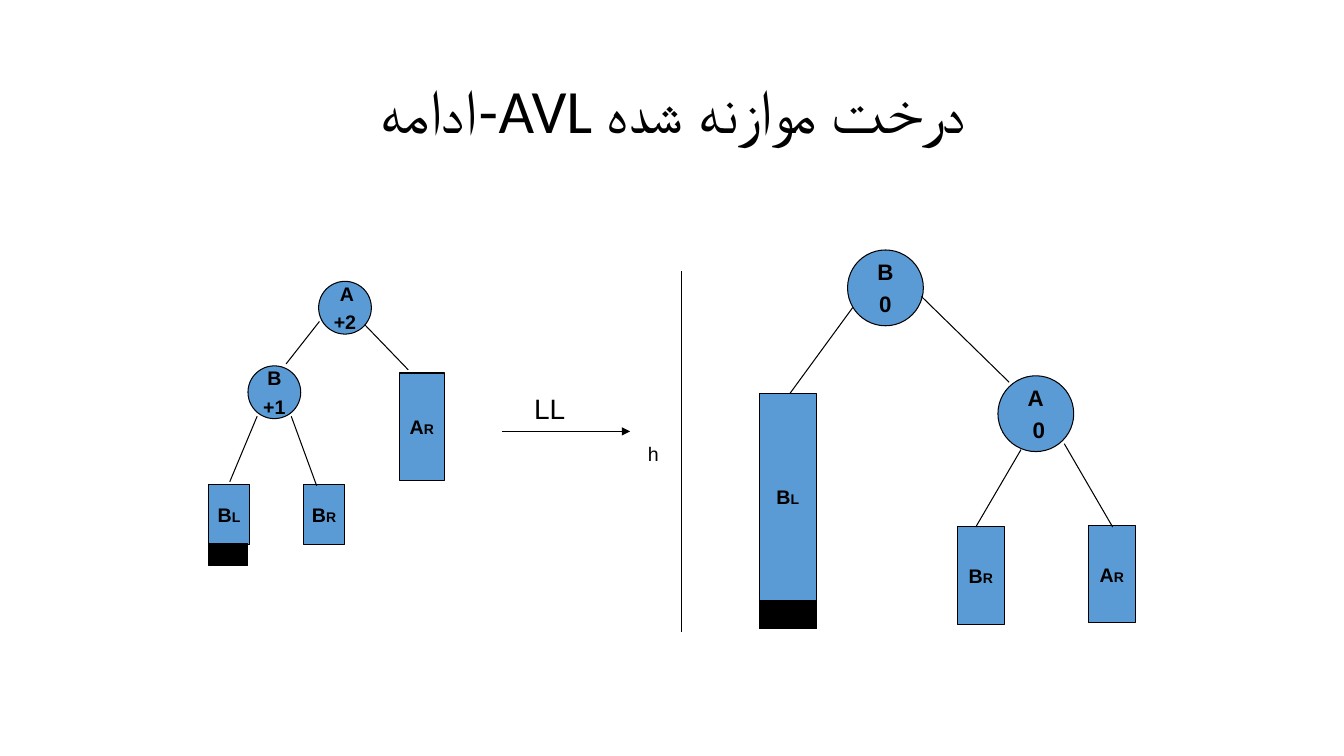
from lxml import etree
from pptx import Presentation
from pptx import util as u
from pptx.dml.color import RGBColor
from pptx.enum import shapes, text
from pptx.oxml import ns


def color(value):
    return RGBColor.from_string(value)


def write(shape, paragraphs, alignment, bold):
    frame = shape.text_frame
    frame.word_wrap = False
    frame.vertical_anchor = text.MSO_ANCHOR.MIDDLE
    for index, pieces in enumerate(paragraphs):
        paragraph = frame.add_paragraph() if index else frame.paragraphs[0]
        paragraph.alignment = alignment
        paragraph.space_before = u.Pt(3.5)
        for words, size in pieces:
            run = paragraph.add_run()
            run.text = words
            run.font.name = "Arial"
            run.font.size = u.Pt(size)
            run.font.bold = bold
            run.font.color.rgb = color("000000")


presentation = Presentation()
presentation.slide_width = u.Cm(33.87)
presentation.slide_height = u.Cm(19.05)
slide = presentation.slides.add_slide(presentation.slide_layouts[5])

title = slide.shapes.title
title.left, title.top, title.width, title.height = (
    u.Cm(length) for length in (2.34, 1.02, 29.21, 3.68)
)
title.text_frame.text = "درخت موازنه شده AVL-ادامه"
title.text_frame.vertical_anchor = text.MSO_ANCHOR.MIDDLE
title.text_frame.auto_size = text.MSO_AUTO_SIZE.NONE
paragraph = title.text_frame.paragraphs[0]
paragraph.alignment = text.PP_ALIGN.CENTER
paragraph.line_spacing = 0.9
paragraph._p.get_or_add_pPr().set("rtl", "1")
font = paragraph.runs[0].font
font.name = "Calibri"
font.size = u.Pt(44)
font.color.rgb = color("000000")

oval = shapes.MSO_SHAPE.OVAL
rectangle = shapes.MSO_SHAPE.RECTANGLE
tree_parts = [
    (oval, 21.36, 6.3, 1.91, 1.91, "5B9BD5", [[("B", 16)], [("0", 16)]]),
    (oval, 25.15, 9.47, 1.91, 1.91, "5B9BD5", [[("A", 16)], [(" 0", 16)]]),
    (rectangle, 24.13, 13.28, 1.18, 2.46, "5B9BD5", [[("B", 14), ("R", 10)]]),
    (rectangle, 27.43, 13.24, 1.18, 2.46, "5B9BD5", [[("A", 14), ("R", 10)]]),
    (rectangle, 19.13, 9.91, 1.45, 5.23, "5B9BD5", [[("B", 14), ("L", 10)]]),
    (rectangle, 19.13, 15.14, 1.45, 0.71, "000000", []),
    (oval, 8.03, 7.09, 1.33, 1.33, "5B9BD5", [[(" ", 10), ("A", 14)], [("+2", 14)]]),
    (oval, 6.25, 9.22, 1.33, 1.33, "5B9BD5", [[("B", 14)], [("+1", 14)]]),
    (rectangle, 5.26, 12.2, 1.03, 1.52, "5B9BD5", [[("B", 14), ("L", 10)]]),
    (rectangle, 7.65, 12.2, 1.03, 1.52, "5B9BD5", [[("B", 14), ("R", 10)]]),
    (rectangle, 10.06, 9.4, 1.14, 2.7, "5B9BD5", [[("A", 14), ("R", 10)]]),
    (rectangle, 5.26, 13.69, 0.99, 0.56, "000000", []),
]
for kind, left, top, width, height, fill, paragraphs in tree_parts:
    shape = slide.shapes.add_shape(kind, u.Cm(left), u.Cm(top), u.Cm(width), u.Cm(height))
    shape.shadow.inherit = False
    shape.fill.solid()
    shape.fill.fore_color.rgb = color(fill)
    shape.line.color.rgb = color("000000")
    shape.line.width = u.Pt(0.75)
    write(shape, paragraphs, text.PP_ALIGN.CENTER, True)

labels = [("LL", 20, 13.21, 9.75, 1.3, 1.09), ("h", 14, 16.08, 11.02, 0.79, 0.84)]
for words, size, left, top, width, height in labels:
    label = slide.shapes.add_textbox(u.Cm(left), u.Cm(top), u.Cm(width), u.Cm(height))
    write(label, [[(words, size)]], text.PP_ALIGN.LEFT, False)

rotation_arrow = (12.65, 10.87, 15.88, 10.87)
height_line = (17.17, 6.83, 17.17, 15.93)
branches = [
    (21.49, 7.75, 19.91, 9.91),
    (23.22, 7.47, 25.43, 9.63),
    (25.73, 11.33, 24.59, 13.28),
    (26.82, 11.18, 28.04, 13.28),
    (8.05, 8.1, 7.21, 9.17),
    (9.19, 8.18, 10.29, 9.32),
    (6.48, 10.49, 5.79, 12.14),
    (7.34, 10.49, 7.98, 12.24),
]
for ends in [rotation_arrow, height_line, *branches]:
    connector = slide.shapes.add_connector(
        shapes.MSO_CONNECTOR.STRAIGHT, *(u.Cm(length) for length in ends)
    )
    connector.line.color.rgb = color("000000")
    connector.line.width = u.Pt(0.75)
    properties = connector._element.spPr
    etree.SubElement(properties, ns.qn("a:effectLst"))
    if ends == rotation_arrow:
        etree.SubElement(properties.find(ns.qn("a:ln")), ns.qn("a:tailEnd"), type="triangle")

presentation.save("out.pptx")
